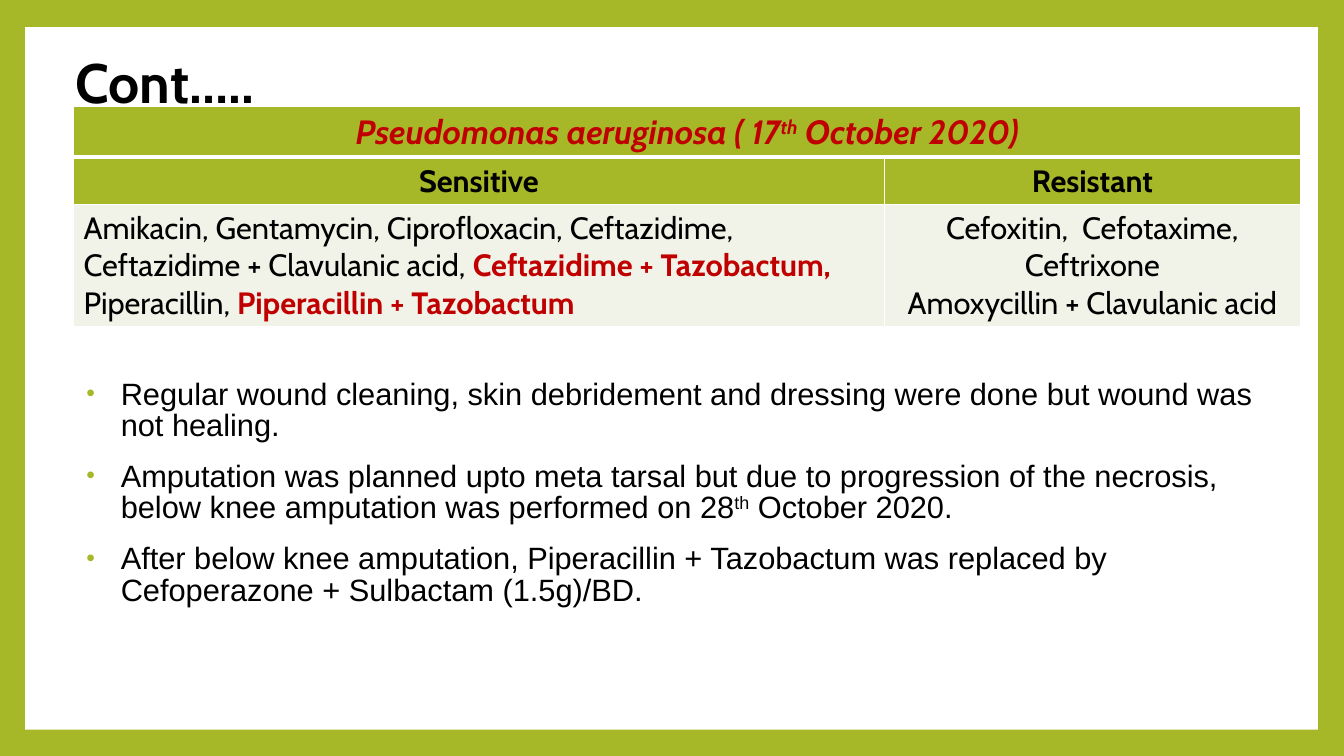
from pptx import Presentation
from pptx.dml.color import RGBColor
from pptx.enum.shapes import MSO_SHAPE
from pptx.enum.text import MSO_ANCHOR, MSO_AUTO_SIZE, PP_ALIGN
from pptx.oxml import parse_xml
from pptx.oxml.ns import nsdecls
from pptx.util import Inches, Pt

GREEN = RGBColor(0xA6, 0xB7, 0x27)
PALE = RGBColor(0xF1, 0xF3, 0xE8)
RED = RGBColor(0xC0, 0x00, 0x00)
BLACK = RGBColor(0x00, 0x00, 0x00)
WHITE = RGBColor(0xFF, 0xFF, 0xFF)
RECT = MSO_SHAPE.RECTANGLE
LEFT, CENTER = PP_ALIGN.LEFT, PP_ALIGN.CENTER
MIDDLE = MSO_ANCHOR.MIDDLE
NO_AUTOFIT = MSO_AUTO_SIZE.NONE

BULLETS = [
    ["Regular wound cleaning, skin debridement and dressing were done "
     "but wound was not healing."],
    ["Amputation was planned upto meta tarsal but due to progression of the "
     "necrosis, below knee amputation was performed on 28", "th", " October 2020."],
    ["After below knee amputation, Piperacillin + Tazobactum was replaced by "
     "Cefoperazone + Sulbactam (1.5g)/BD."],
]
SENSITIVE = [
    ("Amikacin, Gentamycin, Ciprofloxacin, Ceftazidime, "
     "Ceftazidime + Clavulanic acid, ", False),
    ("Ceftazidime + Tazobactum, ", True),
    ("Piperacillin, ", False),
    ("Piperacillin + Tazobactum", True),
]
RESISTANT = ["Cefoxitin,  Cefotaxime, Ceftrixone", "Amoxycillin + Clavulanic acid"]


def add_run(p, text, size, font="Cabin", color=BLACK, bold=False, italic=False):
    r = p.add_run()
    r.text = text
    r.font.size = Pt(size)
    r.font.name = font
    r.font.color.rgb = color
    r.font.bold = bold
    r.font.italic = italic
    if text == "th":  # ordinal suffix is raised
        r.font._element.set("baseline", "30000")


def add_frame(s, x, y, w, h):
    s.background.fill.solid()
    s.background.fill.fore_color.rgb = GREEN
    sp = s.shapes.add_shape(RECT, Inches(x), Inches(y), Inches(w), Inches(h))
    sp.shadow.inherit = False
    sp.fill.solid()
    sp.fill.fore_color.rgb = WHITE
    sp.line.fill.background()
    # The panel lies behind the title
    s.shapes._spTree.remove(sp._element)
    s.shapes._spTree.insert(2, sp._element)


def add_title(s, x, y, w, h):
    sp = s.shapes.title
    sp.left, sp.top, sp.width, sp.height = map(Inches, (x, y, w, h))
    tf = sp.text_frame
    tf.auto_size = NO_AUTOFIT
    tf.vertical_anchor = MIDDLE
    p = tf.paragraphs[0]
    p.alignment = LEFT
    p.line_spacing = 0.9
    add_run(p, "Cont…..", 39.6, bold=True)


def style_cell(cell, fill, bottom=1):
    tcPr = cell._tc.get_or_add_tcPr()
    for side, width in (("L", 1), ("R", 1), ("T", 1), ("B", bottom)):
        tcPr.append(parse_xml(
            f'<a:ln{side} {nsdecls("a")} w="{Pt(width)}"><a:solidFill>'
            f'<a:srgbClr val="{WHITE}"/></a:solidFill></a:ln{side}>'))
    cell.fill.solid()
    cell.fill.fore_color.rgb = fill


def add_sensitivity_table(s, x, y, col_widths, row_heights):
    table = s.shapes.add_table(
        len(row_heights), len(col_widths), Inches(x), Inches(y),
        Inches(sum(col_widths)), Inches(sum(row_heights))).table
    for col, width in zip(table.columns, col_widths):
        col.width = Inches(width)
    for i, (row, height) in enumerate(zip(table.rows, row_heights)):
        row.height = Inches(height)
        for cell in row.cells:
            style_cell(cell, PALE if i == 2 else GREEN, 3 if i == 0 else 1)

    # Organism and date
    table.cell(0, 0).merge(table.cell(0, 1))
    p = table.cell(0, 0).text_frame.paragraphs[0]
    p.alignment = CENTER
    for text in ("Pseudomonas aeruginosa ( 17", "th", " October 2020)"):
        add_run(p, text, 24, color=RED, bold=True, italic=True)

    # Column headings
    for j, heading in enumerate(("Sensitive", "Resistant")):
        p = table.cell(1, j).text_frame.paragraphs[0]
        p.alignment = CENTER
        add_run(p, heading, 22, bold=True)

    # Drugs
    p = table.cell(2, 0).text_frame.paragraphs[0]
    for text, key in SENSITIVE:
        add_run(p, text, 22, color=RED if key else BLACK, bold=key)
    tf = table.cell(2, 1).text_frame
    for i, text in enumerate(RESISTANT):
        p = tf.add_paragraph() if i else tf.paragraphs[0]
        p.alignment = CENTER
        add_run(p, text, 22)


def add_bullets(s, x, y, w, h):
    tf = s.shapes.add_textbox(Inches(x), Inches(y), Inches(w), Inches(h)).text_frame
    tf.word_wrap = True
    for i, texts in enumerate(BULLETS):
        p = tf.add_paragraph() if i else tf.paragraphs[0]
        p.line_spacing = 0.85
        p.space_before = Pt(14)
        pPr = p._p.get_or_add_pPr()
        pPr.set("marL", str(Inches(0.39)))
        pPr.set("indent", str(Inches(-0.34)))
        for tag in (f'buClr {nsdecls("a")}><a:srgbClr val="{GREEN}"/></a:buClr>',
                    f'buSzPct {nsdecls("a")} val="80000"/>',
                    f'buFont {nsdecls("a")} typeface="Arial"/>',
                    f'buChar {nsdecls("a")} char="•"/>'):
            pPr.append(parse_xml("<a:" + tag))
        for text in texts:
            add_run(p, text, 22, font="Arial")


def main():
    prs = Presentation()
    prs.slide_width, prs.slide_height = Inches(13.33), Inches(7.5)
    s = prs.slides.add_slide(prs.slide_layouts[5])
    add_frame(s, 0.25, 0.27, 12.82, 6.97)
    add_title(s, 0.65, 0.54, 10.8, 0.62)
    add_bullets(s, 0.71, 3.72, 12.2, 2.36)
    add_sensitivity_table(s, 0.73, 1.06, (8.04, 4.13), (0.5, 0.47, 1.21))
    prs.save("out.pptx")


if __name__ == "__main__":
    main()
